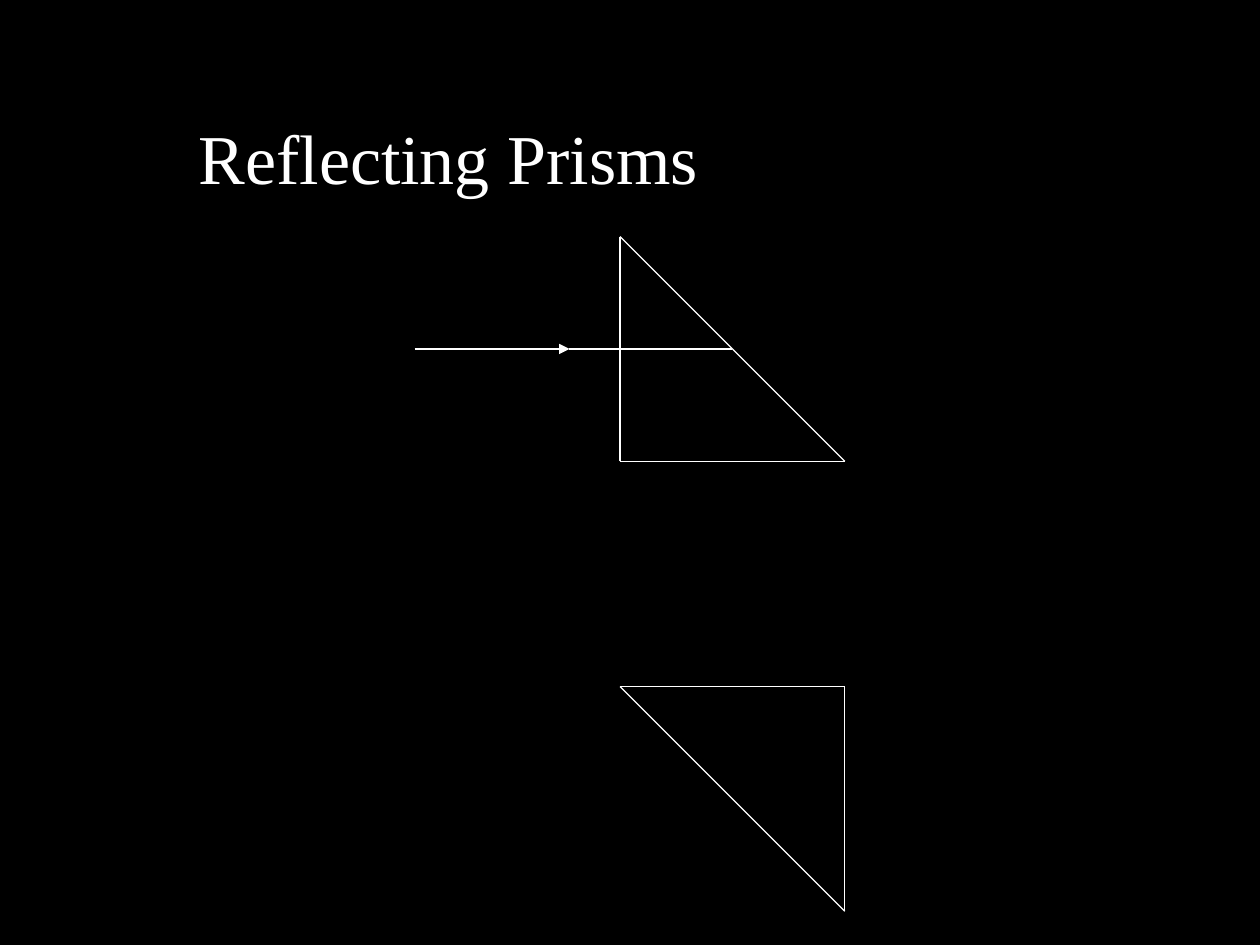
from lxml import etree
from pptx import Presentation
from pptx.dml.color import RGBColor
from pptx.enum.shapes import MSO_CONNECTOR
from pptx.enum.text import MSO_ANCHOR
from pptx.oxml.ns import qn
from pptx.util import Cm, Pt

STRAIGHT = MSO_CONNECTOR.STRAIGHT
MIDDLE = MSO_ANCHOR.MIDDLE
WHITE = "FFFFFF"
BLACK = "000000"


def paint(color_format, hex_color):
    color_format.rgb = RGBColor.from_string(hex_color)


def add_line(group, start, end, arrow=False):
    line = group.shapes.add_connector(STRAIGHT, *map(Cm, start + end))
    paint(line.line.color, WHITE)
    line.line.width = Pt(0.75)
    if arrow:
        outline = line.line._get_or_add_ln()
        etree.SubElement(outline, qn("a:tailEnd"), type="triangle")
    etree.SubElement(line._element.spPr, qn("a:effectLst"))


def add_title(slide, left, top, width, height):
    title = slide.shapes.add_textbox(Cm(left), Cm(top), Cm(width), Cm(height))
    frame = title.text_frame
    frame.word_wrap = True
    frame.vertical_anchor = MIDDLE
    frame.margin_left = frame.margin_right = 0
    frame.margin_top = frame.margin_bottom = 0
    heading = frame.paragraphs[0]
    heading.text = "Reflecting Prisms"
    heading.font.name = "Times New Roman"
    heading.font.size = Pt(40)
    paint(heading.font.color, WHITE)
    indents = heading._p.get_or_add_pPr()
    indents.set("marL", str(Cm(2.72)))
    indents.set("indent", str(Cm(-0.56)))


def add_prism(slide, left, top, side, right_angle_below):
    prism = slide.shapes.add_group_shape()
    upper_end = (left, top)
    lower_end = (left + side, top + side)
    corner = (left, top + side) if right_angle_below else (left + side, top)
    add_line(prism, corner, lower_end)
    add_line(prism, corner, upper_end)
    add_line(prism, upper_end, lower_end)
    return prism


def add_lit_prism(slide, left, top, side):
    prism = add_prism(slide, left, top, side, right_angle_below=True)
    ray_height = top + side / 2
    arrow_tip = (left - 1.02, ray_height)
    add_line(prism, (left - 4.14, ray_height), arrow_tip, arrow=True)
    add_line(prism, arrow_tip, (left + side / 2, ray_height))


def main():
    presentation = Presentation()
    presentation.slide_width = Cm(25.4)
    presentation.slide_height = Cm(19.05)
    slide = presentation.slides.add_slide(presentation.slide_layouts[6])
    background = slide.background.fill
    background.solid()
    paint(background.fore_color, BLACK)

    prism_left, prism_side = 12.5, 4.53
    add_title(slide, 1.85, 1.57, 21.7, 3.18)
    add_lit_prism(slide, prism_left, 4.77, prism_side)
    add_prism(slide, prism_left, 13.84, prism_side, right_angle_below=False)
    presentation.save("out.pptx")


if __name__ == "__main__":
    main()
